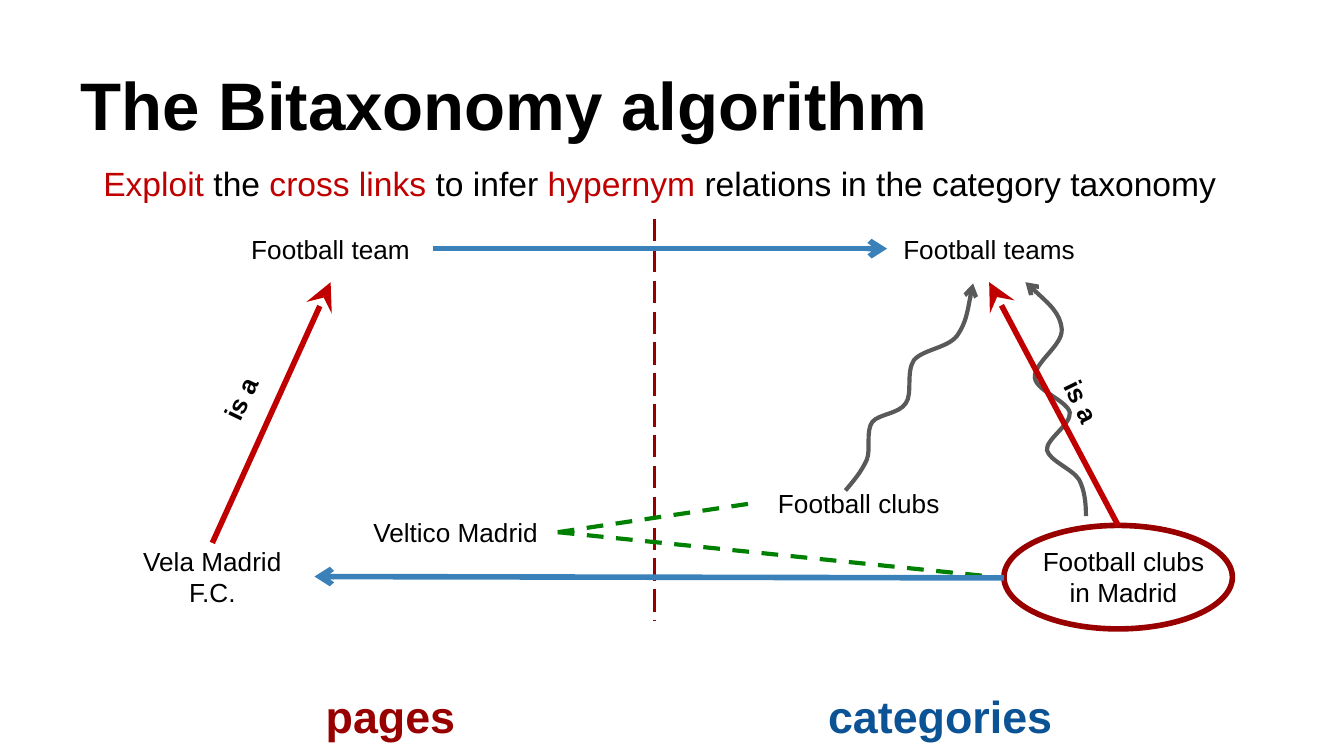
from pptx import Presentation
from pptx.dml.color import RGBColor
from pptx.enum.dml import MSO_LINE as Dash
from pptx.enum.shapes import MSO_CONNECTOR as Conn, MSO_SHAPE as Shape
from pptx.enum.text import MSO_ANCHOR as Anchor, MSO_AUTO_SIZE as Fit, PP_ALIGN as Align
from pptx.oxml.ns import qn
from pptx.util import Inches, Pt
from lxml.etree import SubElement

BLACK = RGBColor(0x00, 0x00, 0x00)
RED = RGBColor(0xC0, 0x00, 0x00)
MAROON = RGBColor(0x98, 0x00, 0x00)
GREEN = RGBColor(0x00, 0x80, 0x00)
BLUE = RGBColor(0x3A, 0x81, 0xBA)
NAVY = RGBColor(0x0B, 0x53, 0x94)
GREY = RGBColor(0x59, 0x59, 0x59)

TOP, LEFT, BOTTOM, RIGHT = range(4)
NODE = (1.52, 0.5)


def style(run, size, color=BLACK, bold=False):
    font = run.font
    font.name, font.size, font.bold = "Arial", Pt(size), bold
    font.color.rgb = color


def fill_text(frame, text, size, color=BLACK, bold=False, align=Align.CENTER,
              anchor=Anchor.MIDDLE):
    frame.word_wrap = True
    frame.auto_size = Fit.NONE
    frame.vertical_anchor = anchor
    frame.margin_left = frame.margin_right = Inches(0.1)
    frame.margin_top = frame.margin_bottom = Inches(0.1)
    frame.text = text
    for para in frame.paragraphs:
        para.alignment = align
        for run in para.runs:
            style(run, size, color, bold)


def label(slide, box, text, size=14, turn=0, **look):
    shape = slide.shapes.add_textbox(*map(Inches, box))
    shape.rotation = turn
    fill_text(shape.text_frame, text, size, **look)
    return shape


def node(slide, x, y, text):
    return label(slide, (x, y, *NODE), text)


def is_a(slide, x, y, turn):
    label(slide, (x, y, 0.6, 0.38), "is a", turn=turn, bold=True,
          align=Align.LEFT, anchor=Anchor.TOP)


def arrow(line, end, kind, size="med"):
    SubElement(line._get_or_add_ln(), qn(f"a:{end}End"), type=kind, w=size, len=size)


def link(slide, start, end, color, width, dash=None, tip=None, size="med"):
    """Join two ends, each a point in inches or a (shape, side) pair."""
    spots = [(0, 0) if hasattr(spot[0], "shape_id") else spot for spot in (start, end)]
    line = slide.shapes.add_connector(
        Conn.STRAIGHT, *(Inches(v) for spot in spots for v in spot))
    if hasattr(start[0], "shape_id"):
        line.begin_connect(*start)
    if hasattr(end[0], "shape_id"):
        line.end_connect(*end)
    line.line.color.rgb, line.line.width = color, Pt(width)
    if dash:
        line.line.dash_style = dash
    if tip:
        arrow(line.line, "tail", tip, size)
    SubElement(line._element.spPr, qn("a:effectLst"))


def wave(slide, x, y, points):
    """Draw a curve with an arrowhead at its start; three points per bend."""
    spots = [(Inches(x + dx), Inches(y + dy)) for dx, dy in points]
    pen = slide.shapes.build_freeform(*spots[0])
    pen.add_line_segments(spots[1:], close=False)
    shape = pen.convert_to_shape()
    shape.shadow.inherit = False
    shape.fill.background()
    shape.line.color.rgb, shape.line.width = GREY, Pt(2.25)
    arrow(shape.line, "head", "arrow")
    # Turn each three straight steps into one Bézier bend
    steps = list(shape._element.iter(qn("a:lnTo")))
    for i in range(0, len(steps), 3):
        bend = SubElement(steps[i].getparent(), qn("a:cubicBezTo"))
        for step in steps[i:i + 3]:
            bend.append(step[0])
            step.getparent().remove(step)


def heading(slide, x, y, w):
    # Title
    title = slide.shapes.title
    title.left, title.top, title.width, title.height = map(Inches, (x, y, w, 0.94))
    fill_text(title.text_frame, "The Bitaxonomy algorithm", 36, bold=True,
              align=Align.LEFT, anchor=Anchor.BOTTOM)
    # Claim with key words in red
    box = slide.shapes.add_textbox(*map(Inches, (x + 0.17, y + 0.93, 8.69, 0.4)))
    box.text_frame.word_wrap = False
    box.text_frame.auto_size = Fit.SHAPE_TO_FIT_TEXT
    para = box.text_frame.paragraphs[0]
    for text, color in (("Exploit ", RED), ("the ", BLACK), ("cross links ", RED),
                        ("to infer ", BLACK), ("hypernym", RED),
                        (" relations in the category taxonomy", BLACK)):
        run = para.add_run()
        run.text = text
        style(run, 18, color)


def pages(slide, x, y):
    team = node(slide, x + 0.88, y, "Football team")
    club = node(slide, x, y + 2.44, "Vela Madrid\vF.C.")
    rival = node(slide, x + 1.81, y + 2.11, "Veltico Madrid")
    link(slide, (club, TOP), (team, BOTTOM), RED, 3, tip="stealth", size="lg")
    is_a(slide, x + 0.66, y + 1.13, 295.7)
    label(slide, (x + 1.18, y + 3.47, 1.81, 0.51), "pages", 24, color=MAROON, bold=True)
    return team, club, rival


def categories(slide, x, y):
    clubs = node(slide, x, y + 1.89, "Football clubs")
    teams = node(slide, x + 0.97, y, "Football teams")
    # Circled category
    ring = slide.shapes.add_shape(
        Shape.OVAL, *map(Inches, (x + 1.84, y + 2.31, 1.7, 0.77)))
    ring.shadow.inherit = False
    ring.fill.background()
    ring.line.color.rgb, ring.line.width = MAROON, Pt(3)
    node(slide, x + 1.97, y + 2.44, "Football clubs\nin Madrid")
    # Wavy paths up to the hypernym
    wave(slide, x, y, [
        (1.61, 0.51), (1.58, 0.65), (1.56, 0.8), (1.49, 0.9), (1.42, 0.99),
        (1.24, 1), (1.17, 1.08), (1.11, 1.17), (1.16, 1.33), (1.11, 1.4),
        (1.06, 1.48), (0.91, 1.48), (0.86, 1.54), (0.81, 1.61), (0.85, 1.74),
        (0.82, 1.82), (0.78, 1.91), (0.72, 1.98), (0.66, 2.05)])
    wave(slide, x, y, [
        (2, 0.5), (2.13, 0.62), (2.26, 0.73), (2.27, 0.85), (2.28, 0.97),
        (2.06, 1.1), (2.07, 1.21), (2.08, 1.31), (2.31, 1.38), (2.33, 1.47),
        (2.34, 1.56), (2.15, 1.67), (2.16, 1.75), (2.18, 1.83), (2.35, 1.89),
        (2.4, 1.97), (2.44, 2.05), (2.45, 2.14), (2.45, 2.24)])
    link(slide, (ring, TOP), (teams, BOTTOM), RED, 3, tip="stealth", size="lg")
    is_a(slide, x + 2.16, y + 1.22, 64)
    label(slide, (x + 0.39, y + 3.47, 1.95, 0.51), "categories", 24, color=NAVY, bold=True)
    return teams, clubs, (x + 1.84, y + 2.7)


def cross(slide, x, y, left, right):
    team, club, rival = left
    teams, clubs, rim = right
    # Divider
    link(slide, (x, y), (x, y + 2.99), MAROON, 1.5, Dash.LONG_DASH)
    # Page and category links
    link(slide, (rival, RIGHT), rim, GREEN, 2.25, Dash.DASH)
    link(slide, (rival, RIGHT), (clubs, LEFT), GREEN, 2.25, Dash.DASH)
    link(slide, rim, (club, RIGHT), BLUE, 3, tip="arrow")
    link(slide, (team, RIGHT), (teams, LEFT), BLUE, 3, tip="arrow")


def main():
    deck = Presentation()
    # Widescreen, 16:9
    deck.slide_width = Inches(10)
    deck.slide_height = deck.slide_width * 9 // 16
    slide = deck.slides.add_slide(deck.slide_layouts[5])
    heading(slide, 0.5, 0.23, 9)
    left = pages(slide, 0.82, 1.6)
    right = categories(slide, 5.63, 1.6)
    cross(slide, 4.87, 1.63, left, right)
    deck.save("out.pptx")


if __name__ == "__main__":
    main()
